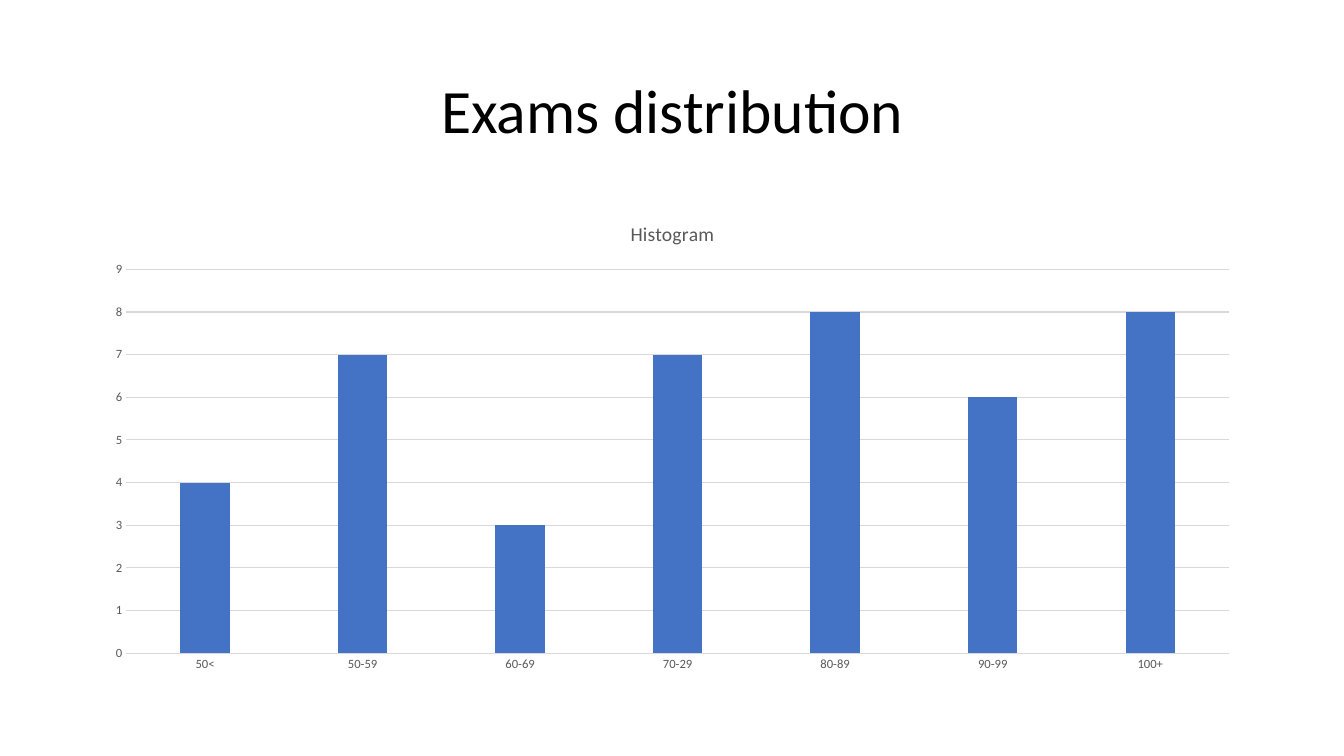
from pptx import Presentation
from pptx.chart.data import CategoryChartData
from pptx.dml.color import RGBColor
from pptx.enum.chart import XL_CHART_TYPE, XL_TICK_MARK
from pptx.enum.text import MSO_ANCHOR, PP_ALIGN
from pptx.util import Inches, Pt

EXAM_COUNTS = {
    "50<": 4, "50-59": 7, "60-69": 3, "70-29": 7,
    "80-89": 8, "90-99": 6, "100+": 8,
}


def color(hex_code):
    return RGBColor.from_string(hex_code)


def apply_format(target, values):
    for name, value in values.items():
        setattr(target, name, value)


class SlideBuilder:
    font_name = "Calibri"
    black, gray, grid, blue = "000000", "595959", "D9D9D9", "4472C4"
    left, width = Inches(0.92), Inches(11.5)

    def __init__(self, deck):
        self.slide = deck.slides.add_slide(deck.slide_layouts[5])

    def style_font(self, font, size, hex_code):
        apply_format(font, {"name": self.font_name, "size": Pt(size), "bold": False})
        font.color.rgb = color(hex_code)

    def style_line(self, line):
        line.color.rgb = color(self.grid)
        line.width = Pt(0.75)

    def add_title(self, text):
        box = self.slide.shapes.title
        apply_format(box, {"left": self.left, "top": Inches(0.4),
                           "width": self.width, "height": Inches(1.45)})
        apply_format(box.text_frame, {"text": text, "word_wrap": True,
                                      "vertical_anchor": MSO_ANCHOR.MIDDLE})
        para = box.text_frame.paragraphs[0]
        apply_format(para, {"alignment": PP_ALIGN.CENTER, "line_spacing": 0.9})
        self.style_font(para.runs[0].font, 44, self.black)

    def add_column_chart(self, title, counts):
        data = CategoryChartData()
        data.categories = list(counts)
        data.add_series("Series 1", list(counts.values()))
        chart = self.slide.shapes.add_chart(
            XL_CHART_TYPE.COLUMN_CLUSTERED, self.left, Inches(2),
            self.width, Inches(4.76), data).chart
        self.style_font(chart.font, 10, self.black)
        chart.has_legend = False

        # Chart title
        chart.has_title = True
        chart.chart_title.include_in_layout = False
        para = chart.chart_title.text_frame.paragraphs[0]
        span = para.add_run()
        span.text = title
        self.style_font(span.font, 14, self.gray)

        # Columns
        plot = chart.plots[0]
        apply_format(plot, {"gap_width": 219, "overlap": -27, "vary_by_categories": False})
        fill = plot.series[0].format.fill
        fill.solid()
        fill.fore_color.rgb = color(self.blue)

        # Axes and gridlines
        for axis in (chart.category_axis, chart.value_axis):
            apply_format(axis, {"major_tick_mark": XL_TICK_MARK.NONE,
                                "minor_tick_mark": XL_TICK_MARK.NONE})
            self.style_font(axis.tick_labels.font, 9, self.gray)
        self.style_line(chart.category_axis.format.line)
        self.style_line(chart.value_axis.major_gridlines.format.line)
        chart.value_axis.format.line.fill.background()
        apply_format(chart.value_axis, {"minimum_scale": 0, "maximum_scale": 9,
                                        "major_unit": 1})


def main():
    deck = Presentation()
    apply_format(deck, {"slide_width": Inches(13.33), "slide_height": Inches(7.5)})
    builder = SlideBuilder(deck)
    builder.add_title("Exams distribution")
    builder.add_column_chart("Histogram", EXAM_COUNTS)
    deck.save("out.pptx")


if __name__ == "__main__":
    main()
